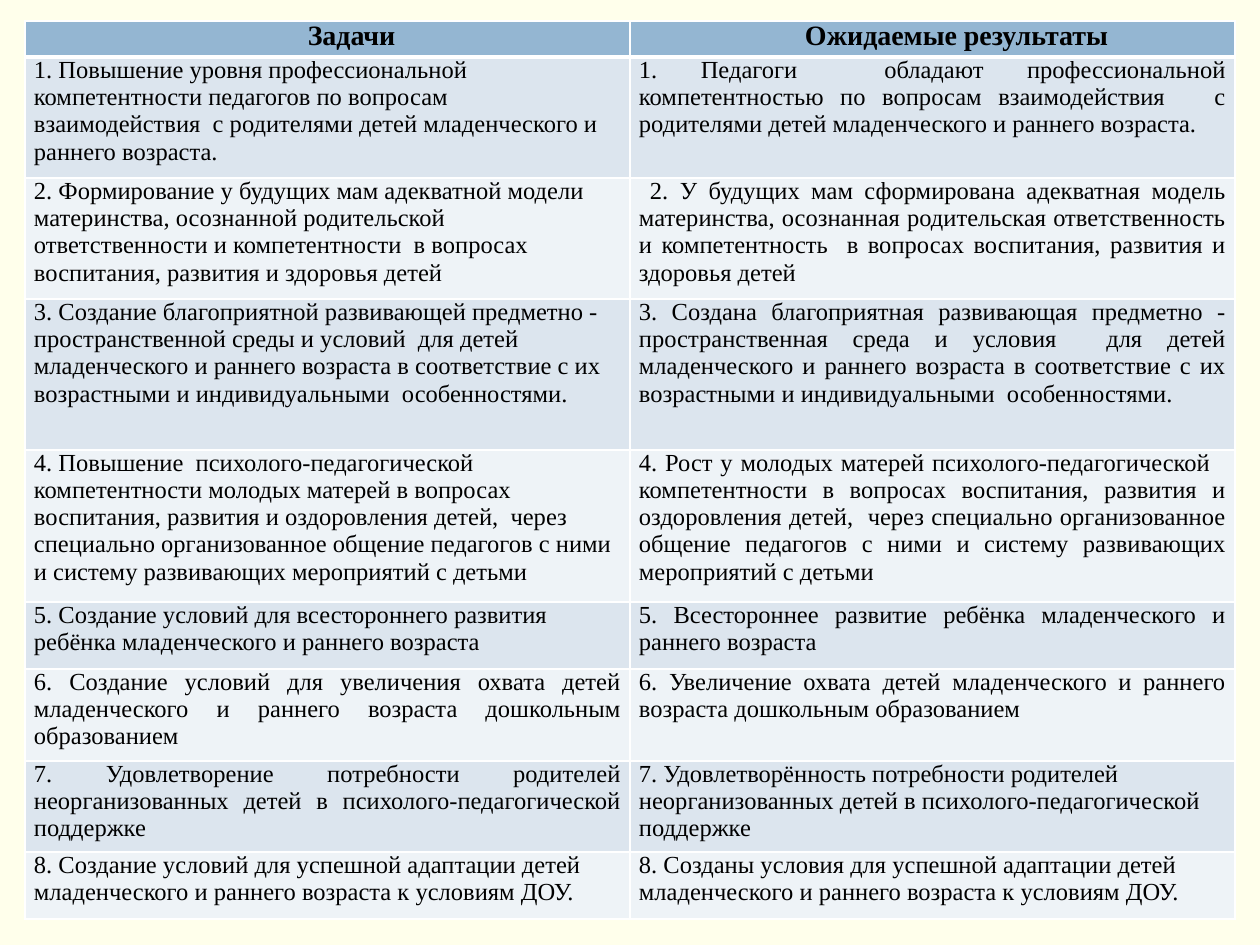
from lxml.etree import SubElement
from pptx import Presentation
from pptx.dml.color import RGBColor
from pptx.enum.text import PP_ALIGN as Align
from pptx.oxml.ns import qn
from pptx.util import Pt

PX_PER_INCH = 126
EMU_PER_PX = 914400 / PX_PER_INCH
COLORS = {
    "background": "FFFFEB",
    "header": "94B6D2",
    "band_dark": "DCE5EE",
    "band_light": "EEF3F7",
    "border": "FFFFFF",
    "text": "000000",
}
HEADERS = ["Задачи", "Ожидаемые результаты"]
# Task, its alignment, expected result, its alignment
GOALS = [
    ("1. Повышение уровня профессиональной компетентности педагогов по вопросам "
     "взаимодействия  с родителями детей младенческого и раннего возраста.", Align.LEFT,
     "1. Педагоги  обладают профессиональной компетентностью по вопросам "
     "взаимодействия   с родителями детей младенческого и раннего возраста.", Align.JUSTIFY),
    ("2. Формирование у будущих мам адекватной модели материнства, осознанной родительской "
     "ответственности и компетентности  в вопросах воспитания, развития и здоровья детей",
     Align.LEFT,
     "2. У будущих мам сформирована адекватная модель материнства, осознанная родительская "
     "ответственность и компетентность  в вопросах воспитания, развития и здоровья детей",
     Align.JUSTIFY),
    ("3. Создание благоприятной развивающей предметно - пространственной среды и условий  "
     "для детей младенческого и раннего возраста в соответствие с их возрастными и "
     "индивидуальными  особенностями.", Align.LEFT,
     "3. Создана благоприятная развивающая предметно - пространственная среда и условия  "
     "для детей младенческого и раннего возраста в соответствие с их возрастными и "
     "индивидуальными  особенностями.", Align.JUSTIFY),
    ("4. Повышение  психолого-педагогической   компетентности молодых матерей в вопросах "
     "воспитания, развития и оздоровления детей,  через специально организованное общение "
     "педагогов с ними и систему развивающих мероприятий с детьми", Align.LEFT,
     "4. Рост у молодых матерей психолого-педагогической   компетентности в вопросах "
     "воспитания, развития и оздоровления детей,  через специально организованное общение "
     "педагогов с ними и систему развивающих мероприятий с детьми", Align.JUSTIFY),
    ("5. Создание условий для всестороннего развития ребёнка младенческого и раннего возраста",
     Align.LEFT,
     "5. Всестороннее развитие ребёнка младенческого и раннего возраста", Align.JUSTIFY),
    ("6. Создание условий для увеличения охвата детей младенческого и раннего возраста "
     "дошкольным образованием", Align.JUSTIFY,
     "6. Увеличение охвата детей младенческого и раннего возраста дошкольным образованием",
     Align.JUSTIFY),
    ("7. Удовлетворение потребности родителей неорганизованных детей в "
     "психолого-педагогической поддержке", Align.JUSTIFY,
     "7. Удовлетворённость потребности родителей неорганизованных детей в "
     "психолого-педагогической поддержке", Align.LEFT),
    ("8. Создание условий для успешной адаптации детей младенческого и раннего возраста "
     "к условиям ДОУ.", Align.LEFT,
     "8. Созданы условия для успешной адаптации детей младенческого и раннего возраста "
     "к условиям ДОУ.", Align.LEFT),
]
COLUMN_WIDTHS = [605, 605]
ROW_HEIGHTS = [36, 121, 121, 151, 152, 67, 92, 91, 67]
HEADER_INDENT = 48
INDENTS = {(2, 1): 11}


def px(length):
    return round(length * EMU_PER_PX)


def rgb(name):
    return RGBColor.from_string(COLORS[name])


def write_text(frame, text, size=14, bold=False, align=Align.LEFT, indent=0,
               font="Times New Roman", color="text"):
    paragraph = frame.paragraphs[0]
    paragraph.alignment = align
    if indent:
        properties = paragraph._p.get_or_add_pPr()
        properties.set("marL", "0")
        properties.set("indent", str(px(indent)))
    run = paragraph.add_run()
    run.text = text
    run.font.name = font
    run.font.size = Pt(size)
    run.font.bold = bold
    run.font.color.rgb = rgb(color)


class SlideBuilder:
    def __init__(self, slide):
        self.slide = slide

    def background(self, color):
        fill = self.slide.background.fill
        fill.solid()
        fill.fore_color.rgb = rgb(color)

    def table(self, left, top, column_widths, row_heights):
        frame = self.slide.shapes.add_table(
            len(row_heights), len(column_widths), px(left), px(top),
            px(sum(column_widths)), px(sum(row_heights)))
        table = frame.table
        table.horz_banding = False
        for column, width in zip(table.columns, column_widths):
            column.width = px(width)
        for row, height in zip(table.rows, row_heights):
            row.height = px(height)
        return table

    def cell(self, cell, text, fill, top_line=1, bottom_line=1, **text_format):
        cell.margin_left = cell.margin_right = px(9)
        cell.margin_top = cell.margin_bottom = 0
        self.borders(cell, {"lnL": 1, "lnR": 1, "lnT": top_line, "lnB": bottom_line})
        cell.fill.solid()
        cell.fill.fore_color.rgb = rgb(fill)
        write_text(cell.text_frame, text, **text_format)

    def borders(self, cell, widths):
        properties = cell._tc.get_or_add_tcPr()
        for side, width in widths.items():
            line = SubElement(properties, qn(f"a:{side}"), w=str(Pt(width)))
            solid = SubElement(line, qn("a:solidFill"))
            SubElement(solid, qn("a:srgbClr"), val=COLORS["border"])


def main():
    presentation = Presentation()
    presentation.slide_width = px(1260)
    presentation.slide_height = px(945)
    builder = SlideBuilder(presentation.slides.add_slide(presentation.slide_layouts[6]))
    builder.background("background")
    table = builder.table(25, 21, COLUMN_WIDTHS, ROW_HEIGHTS)

    for column, header in enumerate(HEADERS):
        builder.cell(table.cell(0, column), header, "header", bottom_line=3, size=16,
                     bold=True, align=Align.CENTER, indent=HEADER_INDENT)
    for row, (task, task_align, result, result_align) in enumerate(GOALS, start=1):
        fill = "band_dark" if row % 2 else "band_light"
        top_line = 3 if row == 1 else 1
        for column, (text, align) in enumerate([(task, task_align), (result, result_align)]):
            builder.cell(table.cell(row, column), text, fill, top_line=top_line,
                         align=align, indent=INDENTS.get((row, column), 0))
    presentation.save("out.pptx")


if __name__ == "__main__":
    main()
